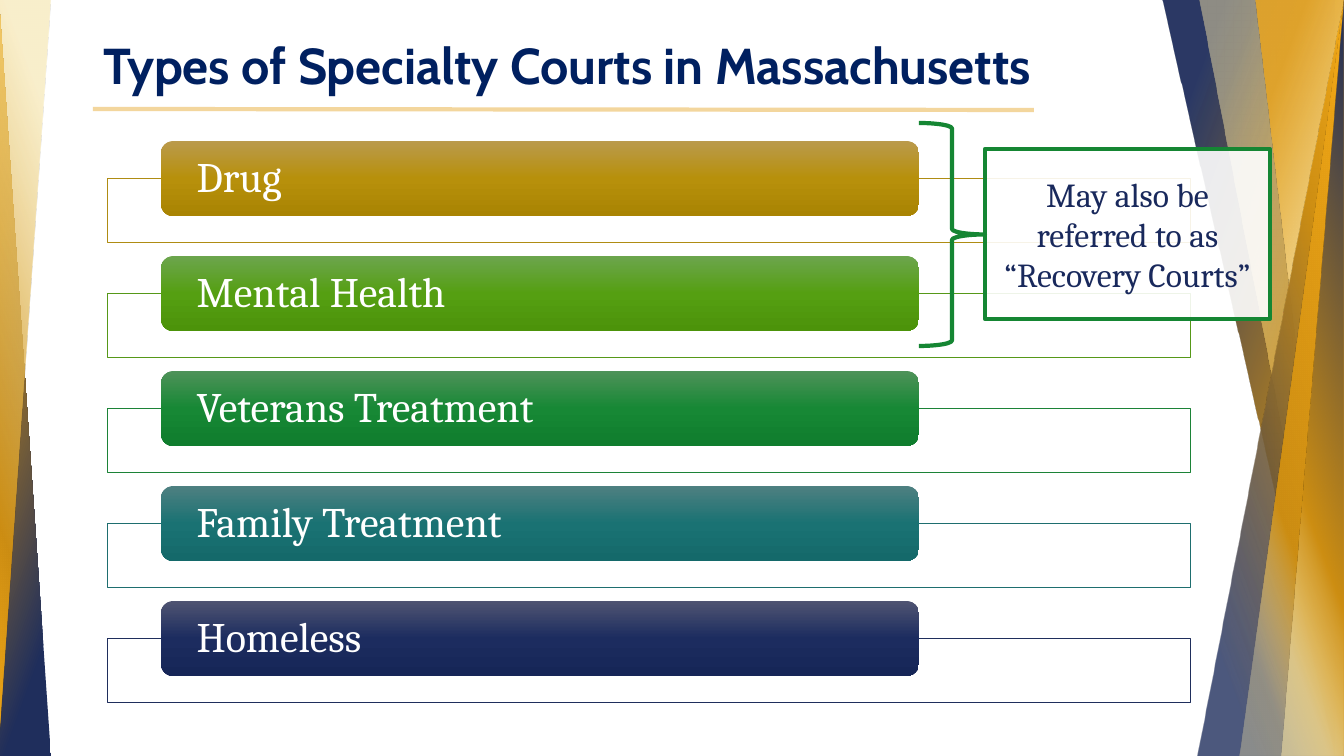
"""Build a slide listing the types of specialty courts in Massachusetts."""
import lxml.etree
import pptx
import pptx.dml.color
import pptx.enum.shapes
import pptx.enum.text
import pptx.oxml.ns
import pptx.util

SCALE = 914400 / 100.8
SLIDE_WIDTH, SLIDE_HEIGHT = 1344, 756
SHAPES = pptx.enum.shapes.MSO_SHAPE

THEME = {
    "title": ("Cabin", 36, "002060"),
    "court": ("Cambria", 30, "FFFFFF"),
    "callout": ("Cambria", 24, "19295C"),
    "white": "FFFFFF",
    "rule": "F3D69D",
    "accent": "158633",
    "navy": "1F2E5C",
    "gold": "CD8E13",
    "amber": "F3A917",
    "orange": "E5A425",
    "cream": "F5E3A5",
    "sand": "EDC56B",
    "pale": "F7EABA",
}

TITLE = "Types of Specialty Courts in Massachusetts"
CALLOUT = "May also be referred to as “Recovery Courts”"
COURTS = [
    ("Drug", "AF8C13", ("BA9A4C", "B7900B", "A98403")),
    ("Mental Health", "569818", ("6CA54D", "559F12", "4C930A")),
    ("Veterans Treatment", "1C8337", ("4E9259", "178835", "0F7D2D")),
    ("Family Treatment", "1E6E6F", ("4E8081", "1A7273", "14696A")),
    ("Homeless", "1F2E5C", ("4F5472", "1C2C5F", "162657")),
]

# left, width, rotation, flipped, stops of (position, colour, opacity)
RIBBONS = [
    (1270, 74, 180, False, [(14, "orange", 100), (49, "gold", 100), (90, "navy", 100)]),
    (1162, 172, 180, False, [(14, "navy", 94), (74, "gold", 100), (100, "amber", 100)]),
    (1200, 144, 180, False, [(14, "cream", 49), (74, "gold", 100), (100, "amber", 100)]),
    (1256, 88, 180, False, [(14, "orange", 89), (33, "sand", 100), (54, "pale", 100), (100, "amber", 100)]),
    (1198, 146, 0, True, [(14, "navy", 79), (74, "gold", 100), (100, "amber", 100)]),
    (1240, 104, 0, True, [(14, "cream", 37), (34, "gold", 100), (100, "amber", 100)]),
    (1282, 62, 0, True, [(14, "cream", 57), (34, "gold", 100), (100, "navy", 100)]),
    (-1, 52, 0, False, [(14, "navy", 100), (74, "gold", 100), (100, "amber", 100)]),
    (-1, 52, 180, True, [(14, "cream", 56), (74, "gold", 100), (100, "amber", 100)]),
]
RIBBON_ANGLE, BAR_ANGLE = 200, 90

ROW_PITCH = 115
FRAME = (107, 178, 1083, 64)
BAR = (161, 141, 758, 75)
BAR_INSET = 32
TITLE_BOX = (93, 15, 1099, 85)
RULE = (93, 109, 1034, 110)
CALLOUT_BOX = (985, 149, 285, 170)
BRACE = (919, 123, 66, 223)


def px(length):
    return pptx.util.Emu(round(length * SCALE))


def rgb(colour):
    return pptx.dml.color.RGBColor.from_string(colour)


def add_child(parent, tag, **attributes):
    return lxml.etree.SubElement(parent, pptx.oxml.ns.qn(tag), attributes)


def add_shape(slide, kind, box):
    shape = slide.shapes.add_shape(kind, *map(px, box))
    shape.shadow.inherit = False
    shape.fill.background()
    shape.line.fill.background()
    return shape


def set_outline(shape, colour, width):
    shape.line.color.rgb = rgb(colour)
    shape.line.width = pptx.util.Pt(width)


def fill_white(shape, opacity=90):
    shape.fill.solid()
    shape.fill.fore_color.rgb = rgb(THEME["white"])
    colour = shape.element.spPr.find(pptx.oxml.ns.qn("a:solidFill"))[0]
    add_child(colour, "a:alpha", val=str(opacity * 1000))


def fill_gradient(shape, stops, angle):
    shape.fill.gradient()
    shape.fill.gradient_angle = 360 - angle
    stop_list = next(shape.element.spPr.iter(pptx.oxml.ns.qn("a:gsLst")))
    for stop in list(stop_list):
        stop_list.remove(stop)
    for position, colour, opacity in stops:
        stop = add_child(stop_list, "a:gs", pos=str(position * 1000))
        colour_element = add_child(stop, "a:srgbClr", val=colour)
        if opacity < 100:
            add_child(colour_element, "a:alpha", val=str(opacity * 1000))


def write(shape, text, style, alignment, anchor, spacing=1.0, bold=False):
    frame = shape.text_frame
    frame.word_wrap = True
    frame.vertical_anchor = anchor
    paragraph = frame.paragraphs[0]
    paragraph.alignment = alignment
    paragraph.line_spacing = spacing
    run = paragraph.add_run()
    run.text = text
    name, size, colour = THEME[style]
    run.font.name = name
    run.font.size = pptx.util.Pt(size)
    run.font.bold = bold
    run.font.color.rgb = rgb(colour)


def add_ribbons(slide):
    for left, width, rotation, flipped, stops in RIBBONS:
        ribbon = add_shape(slide, SHAPES.RIGHT_TRIANGLE, (left, 0, width, SLIDE_HEIGHT))
        ribbon.rotation = rotation
        if flipped:
            ribbon.element.spPr.xfrm.set("flipH", "1")
        colours = [(position, THEME[name], opacity) for position, name, opacity in stops]
        fill_gradient(ribbon, colours, RIBBON_ANGLE)


def add_rule(slide):
    straight = pptx.enum.shapes.MSO_CONNECTOR.STRAIGHT
    rule = slide.shapes.add_connector(straight, *map(px, RULE))
    set_outline(rule, THEME["rule"], 3)
    add_child(rule.element.spPr, "a:effectLst")


def add_courts(slide, left, middle):
    for row, (court, outline, shades) in enumerate(COURTS):
        offset = row * ROW_PITCH
        frame = add_shape(slide, SHAPES.RECTANGLE, (FRAME[0], FRAME[1] + offset, *FRAME[2:]))
        fill_white(frame)
        set_outline(frame, outline, 0.5)
        bar = add_shape(slide, SHAPES.ROUNDED_RECTANGLE, (BAR[0], BAR[1] + offset, *BAR[2:]))
        fill_gradient(bar, [(50 * step, shade, 100) for step, shade in enumerate(shades)], BAR_ANGLE)
        bar.text_frame.margin_left = bar.text_frame.margin_right = px(BAR_INSET)
        bar.text_frame.margin_top = bar.text_frame.margin_bottom = 0
        write(bar, court, "court", left, middle, 0.9)


def main():
    presentation = pptx.Presentation()
    presentation.slide_width = px(SLIDE_WIDTH)
    presentation.slide_height = px(SLIDE_HEIGHT)
    slide = presentation.slides.add_slide(presentation.slide_layouts.get_by_name("Title Only"))
    left, center = pptx.enum.text.PP_ALIGN.LEFT, pptx.enum.text.PP_ALIGN.CENTER
    middle, bottom = pptx.enum.text.MSO_ANCHOR.MIDDLE, pptx.enum.text.MSO_ANCHOR.BOTTOM

    add_ribbons(slide)
    add_rule(slide)
    add_courts(slide, left, middle)

    title = slide.shapes.title
    title.left, title.top, title.width, title.height = map(px, TITLE_BOX)
    write(title, TITLE, "title", left, bottom, 0.9, bold=True)

    callout = add_shape(slide, SHAPES.RECTANGLE, CALLOUT_BOX)
    fill_white(callout)
    set_outline(callout, THEME["accent"], 3)
    write(callout, CALLOUT, "callout", center, middle)

    brace = add_shape(slide, SHAPES.RIGHT_BRACE, BRACE)
    set_outline(brace, THEME["accent"], 3)
    presentation.save("out.pptx")


if __name__ == "__main__":
    main()
